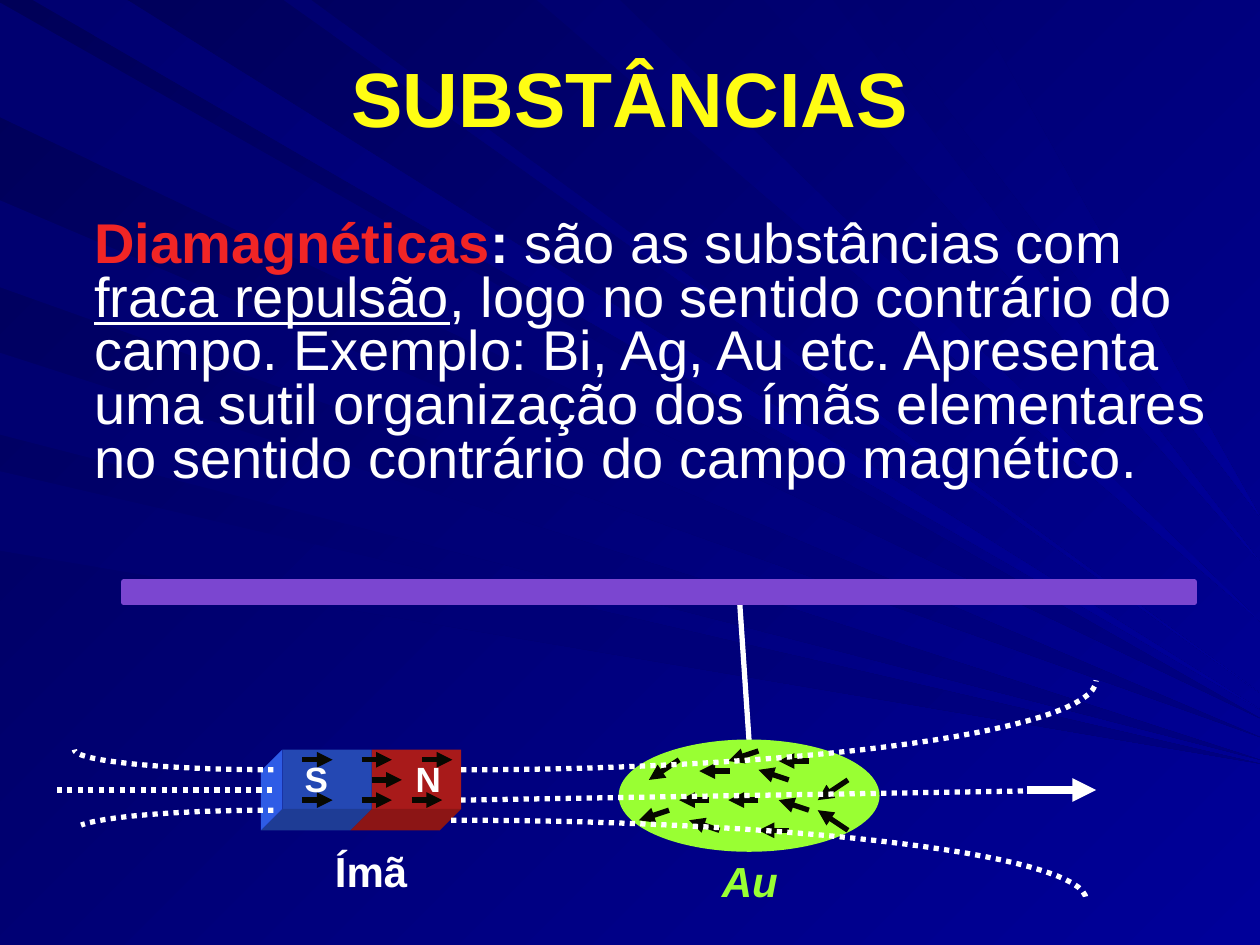
"""Build the slide about diamagnetic substances, with a magnet repelling a hanging gold disc."""
import math

from lxml import etree
from pptx import Presentation
from pptx.dml.color import RGBColor
from pptx.enum.dml import MSO_LINE
from pptx.enum.shapes import MSO_CONNECTOR, MSO_SHAPE
from pptx.enum.text import MSO_ANCHOR, PP_ALIGN
from pptx.oxml.ns import qn
from pptx.util import Inches, Pt

DOTTED = MSO_LINE.ROUND_DOT
STRAIGHT = MSO_CONNECTOR.STRAIGHT
RECTANGLE, ELLIPSE = MSO_SHAPE.RECTANGLE, MSO_SHAPE.OVAL
MIDDLE, CENTER = MSO_ANCHOR.MIDDLE, PP_ALIGN.CENTER
FONT = "Arial"
WHITE = RGBColor.from_string("FFFFFF")
BLACK = RGBColor.from_string("070800")
YELLOW = RGBColor.from_string("FFFD13")
RED = RGBColor.from_string("F12525")
GREEN = RGBColor.from_string("99FF33")
PURPLE = RGBColor.from_string("7B46D0")
NORTH_FRONT = RGBColor.from_string("A81A1A")
NORTH_BOTTOM = RGBColor.from_string("8C1515")
SOUTH_FRONT = RGBColor.from_string("2448B3")
SOUTH_BOTTOM = RGBColor.from_string("1E3C95")
SOUTH_SIDE = RGBColor.from_string("2E5CE6")
MIDNIGHT = RGBColor.from_string("000058")
INDIGO = RGBColor.from_string("000070")
NAVY = RGBColor.from_string("000080")
ROYAL = RGBColor.from_string("000099")

presentation = Presentation()
presentation.slide_width, presentation.slide_height = Inches(10), Inches(7.5)
slide = presentation.slides.add_slide(presentation.slide_layouts[5])
shapes = slide.shapes


def draw_outline(points, closed=True):
    corners = [(Inches(x), Inches(y)) for x, y in points]
    builder = shapes.build_freeform(*corners[0])
    builder.add_line_segments(corners[1:], close=closed)
    shape = builder.convert_to_shape()
    shape.shadow.inherit = False
    shape.line.fill.background()
    return shape


def draw_line(start, end, color, width=3, arrow=False, dash=None):
    connector = shapes.add_connector(STRAIGHT, *[Inches(value) for value in start + end])
    connector.line.color.rgb = color
    connector.line.width = Pt(width)
    if dash:
        connector.line.dash_style = dash
    properties = connector.element.spPr
    if arrow:
        etree.SubElement(properties.get_or_add_ln(), qn("a:tailEnd"), type="triangle")
    etree.SubElement(properties, qn("a:effectLst"))
    return connector


left_rays = [(0.02, 0.93, 5.7), (1.59, 2.28, 5.85), (2.8, 3.45, 6.03), (3.74, 4.37, 6.06)]
top_rays = [(0.26, 1.01, 5.63), (2.25, 2.47, 5.5), (4.26, 4.92, 4.93), (6.06, 6.61, 4.46), (6.86, 7.7, 4.1)]
rays = [([(0, first), (0, second), (10, tip)], NAVY) for first, second, tip in left_rays]
rays += [([(first, 0), (second, 0), (10, tip)], ROYAL) for first, second, tip in top_rays]
backdrop = slide.background.fill
gradients = [(backdrop, MIDNIGHT, ROYAL)]
gradients += [(draw_outline(corners).fill, INDIGO, color) for corners, color in rays]
for fill, first_color, last_color in gradients:
    fill.gradient()
    fill.gradient_angle = 315
    fill.gradient_stops[0].color.rgb = first_color
    fill.gradient_stops[1].color.rgb = last_color

title = shapes.title
title.element.getparent().append(title.element)
title.left, title.top, title.width, title.height = Inches(0.5), Inches(0.3), Inches(9), Inches(0.93)
title.text_frame.vertical_anchor = MIDDLE
definition = shapes.add_textbox(Inches(0.27), Inches(1.7), Inches(9.49), Inches(2.16))
definition.text_frame.word_wrap = True
title_paragraph = title.text_frame.paragraphs[0]
title_paragraph.alignment = CENTER
paragraph = definition.text_frame.paragraphs[0]
paragraph.line_spacing = 0.8
paragraph._p.get_or_add_pPr().set("marL", str(Inches(0.38)))
for target, text, size, color, bold, underline in [
    (title_paragraph, "SUBSTÂNCIAS", 44, YELLOW, True, False),
    (paragraph, "Diamagnéticas", 32, RED, True, False),
    (paragraph, ": ", 32, WHITE, True, False),
    (paragraph, "são as substâncias com ", 32, WHITE, False, False),
    (paragraph, "fraca repulsão", 32, WHITE, False, True),
    (paragraph, ", logo no sentido contrário do campo. Exemplo: Bi, Ag, Au etc. Apresenta uma sutil "
     "organização dos ímãs elementares no sentido contrário do campo magnético.", 32, WHITE, False, False),
]:
    run = target.add_run()
    run.text = text
    run.font.name, run.font.size, run.font.color.rgb = FONT, Pt(size), color
    run.font.bold, run.font.underline = bold, underline

thread = draw_line((5.94, 5.88), (5.87, 4.77), WHITE)
for kind, box, color, line_width in [
    (RECTANGLE, (0.98, 4.62, 8.5, 0.16), PURPLE, 3),
    (ELLIPSE, (4.92, 5.88, 2.05, 0.87), GREEN, 1.5),
    (RECTANGLE, (2.95, 5.95, 0.71, 0.47), NORTH_FRONT, 0),
    (RECTANGLE, (2.24, 5.95, 0.71, 0.47), SOUTH_FRONT, 0),
]:
    shape = shapes.add_shape(kind, *[Inches(value) for value in box])
    shape.shadow.inherit = False
    shape.fill.solid()
    shape.fill.fore_color.rgb = color
    if line_width:
        shape.line.color.rgb = color
        shape.line.width = Pt(line_width)
    else:
        shape.line.fill.background()
    if kind == ELLIPSE:
        thread.begin_connect(shape, 0)

depth = 0.17
for color, (left, top), (right, bottom) in [
    (NORTH_BOTTOM, (2.95, 6.42), (3.66, 6.42)),
    (SOUTH_BOTTOM, (2.24, 6.42), (2.95, 6.42)),
    (SOUTH_SIDE, (2.24, 5.95), (2.24, 6.42)),
]:
    face = draw_outline([(left, top), (right, bottom), (right - depth, bottom + depth), (left - depth, top + depth)])
    face.fill.solid()
    face.fill.fore_color.rgb = color

step = 0.24
for rise, starts in [
    (0, [(6.26, 6.59), (6.02, 6.35), (5.79, 6.12), (5.63, 6.35), (6.42, 6.04)]),
    (-0.08, [(5.71, 6.59), (6.42, 6.43), (6.26, 6.19)]),
    (0.08, [(5.31, 6.43), (6.02, 5.96)]),
    (0.16, [(5.39, 6.03), (6.73, 6.19)]),
    (-0.16, [(6.73, 6.59)]),
]:
    for x, y in starts:
        draw_line((x, y), (x - step, y + rise), BLACK, arrow=True)
for y, row in [(6.03, (2.4, 2.87, 3.35)), (6.19, (2.95,)), (6.35, (2.4, 2.87, 3.27))]:
    for x in row:
        draw_line((x, y), (x + step, y), BLACK, arrow=True)

for x, y, reach, rise, sweep in [
    (3.66, 6.11, 5.04, -0.71, 90),
    (3.58, 6.51, 5.04, 0.63, 90),
    (2.17, 6.11, -1.58, -0.16, 90),
    (2.17, 6.43, -1.58, 0.16, 75),
]:
    angles = [math.radians(sweep * part / 30) for part in range(31)]
    field_line = draw_outline(
        [(x + reach * math.sin(angle), y + rise * (1 - math.cos(angle))) for angle in angles], closed=False)
    field_line.fill.background()
    field_line.line.color.rgb = WHITE
    field_line.line.width = Pt(3)
    field_line.line.dash_style = DOTTED
draw_line((2.16, 6.27), (0.43, 6.27), WHITE, dash=DOTTED)
draw_line((8.62, 6.27), (3.66, 6.35), WHITE, dash=DOTTED)
draw_line((8.15, 6.27), (8.7, 6.27), WHITE, width=4.5, arrow=True)

for text, box, size, color, italic in [
    ("Ímã", (2.56, 6.66, 0.87, 0.5), 24, WHITE, False),
    ("S", (2.32, 5.96, 0.38, 0.43), 20, WHITE, False),
    ("N", (3.2, 5.96, 0.4, 0.43), 20, WHITE, False),
    ("Au", (5.63, 6.74, 0.65, 0.5), 24, GREEN, True),
]:
    label = shapes.add_textbox(*[Inches(value) for value in box])
    label.text_frame.word_wrap = False
    label.text_frame.vertical_anchor = MIDDLE
    run = label.text_frame.paragraphs[0].add_run()
    run.text = text
    run.font.name, run.font.size, run.font.color.rgb = FONT, Pt(size), color
    run.font.bold, run.font.italic = True, italic

presentation.save("out.pptx")
